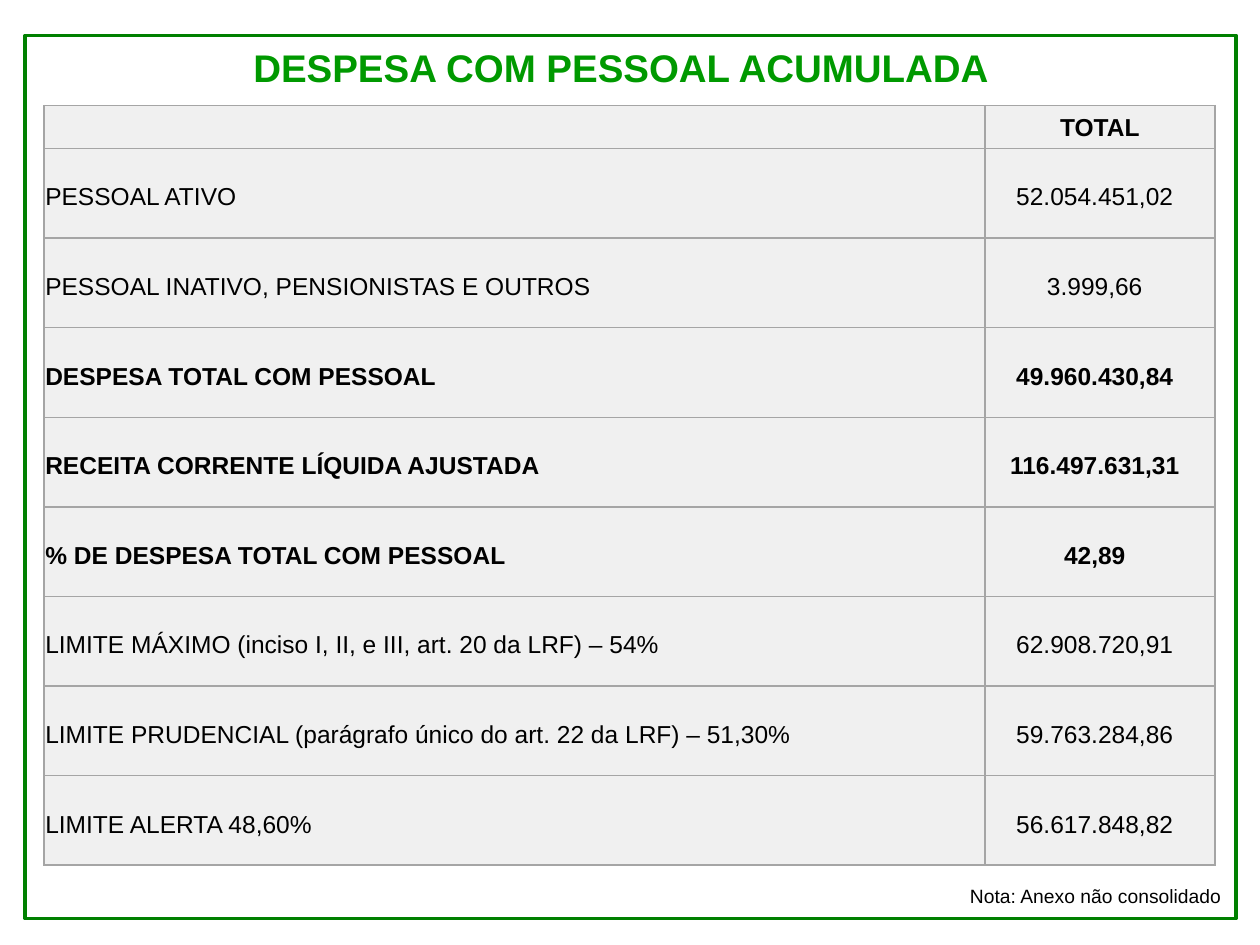
from lxml import etree
from pptx import Presentation
from pptx.dml import color
from pptx.enum import shapes, text
from pptx.oxml import ns
from pptx.util import Pt

FONT = "Arial"
GREY_LINE = "A5A5A5"
HEADER_HEIGHT = 24.6
ROW_HEIGHT = 51.2
COLUMN_WIDTHS = (537.6, 131.4)
EXPENSES = [
    ("PESSOAL ATIVO", "52.054.451,02", False),
    ("PESSOAL INATIVO, PENSIONISTAS E OUTROS", "3.999,66", False),
    ("DESPESA TOTAL COM PESSOAL", "49.960.430,84", True),
    ("RECEITA CORRENTE LÍQUIDA AJUSTADA", "116.497.631,31", True),
    ("% DE DESPESA TOTAL COM PESSOAL", "42,89", True),
    ("LIMITE MÁXIMO (inciso I, II, e III, art. 20 da LRF) – 54%", "62.908.720,91", False),
    ("LIMITE PRUDENCIAL (parágrafo único do art. 22 da LRF) – 51,30%", "59.763.284,86", False),
    ("LIMITE ALERTA 48,60%", "56.617.848,82", False),
]


def rgb(value):
    return color.RGBColor.from_string(value)


def write(frame, words, size, align, bold=False, ink="000000"):
    frame.text = words
    para = frame.paragraphs[0]
    para.alignment = align
    for span in para.runs:
        span.font.name = FONT
        span.font.size = Pt(size)
        span.font.bold = bold
        span.font.color.rgb = rgb(ink)


def add_frame(page):
    frame = page.shapes.add_shape(
        shapes.MSO_SHAPE.RECTANGLE, Pt(14.4), Pt(20.2), Pt(692), Pt(504.7))
    frame.shadow.inherit = False
    frame.fill.background()
    frame.line.color.rgb = rgb("008000")
    frame.line.width = Pt(2)


def set_title(page):
    title = page.shapes.title
    title.left, title.top, title.width, title.height = Pt(65.5), Pt(0), Pt(584), Pt(55.4)
    title.text_frame.vertical_anchor = text.MSO_ANCHOR.BOTTOM
    write(title.text_frame, "DESPESA COM PESSOAL ACUMULADA ", 22,
          text.PP_ALIGN.CENTER, True, "009900")


def add_borders(cell):
    properties = cell._tc.get_or_add_tcPr()
    for position, side in enumerate(("lnL", "lnR", "lnT", "lnB")):
        line = etree.Element(ns.qn(f"a:{side}"), w=str(Pt(1)))
        fill = etree.SubElement(line, ns.qn("a:solidFill"))
        etree.SubElement(fill, ns.qn("a:srgbClr"), val=GREY_LINE)
        properties.insert(position, line)


def fill_cell(cell, words, align, bold, header):
    cell.fill.solid()
    cell.fill.fore_color.rgb = rgb("F0F0F0")
    cell.margin_left = cell.margin_top = Pt(0.7)
    cell.margin_right = Pt(0.7 if header else 6.5)
    cell.margin_bottom = Pt(0 if header else 15.4)
    cell.vertical_anchor = text.MSO_ANCHOR.MIDDLE if header else text.MSO_ANCHOR.BOTTOM
    write(cell.text_frame, words, 14, align, bold)
    add_borders(cell)


def add_expense_table(page):
    rows = [("", "TOTAL", True)] + EXPENSES
    height = HEADER_HEIGHT + ROW_HEIGHT * len(EXPENSES)
    table = page.shapes.add_table(
        len(rows), 2, Pt(25.2), Pt(60.3), Pt(sum(COLUMN_WIDTHS)), Pt(height)).table
    for column, width in zip(table.columns, COLUMN_WIDTHS):
        column.width = Pt(width)
    for index, (label, total, bold) in enumerate(rows):
        header = index == 0
        table.rows[index].height = Pt(HEADER_HEIGHT if header else ROW_HEIGHT)
        fill_cell(table.cell(index, 0), label, text.PP_ALIGN.JUSTIFY, bold, header)
        fill_cell(table.cell(index, 1), total, text.PP_ALIGN.CENTER, bold, header)


def add_note(page):
    box = page.shapes.add_textbox(Pt(547.2), Pt(501.8), Pt(187.2), Pt(20.9))
    box.text_frame.word_wrap = True
    write(box.text_frame, "Nota: Anexo não consolidado", 11, text.PP_ALIGN.LEFT)


def main():
    deck = Presentation()
    deck.slide_width, deck.slide_height = Pt(720), Pt(540)
    page = deck.slides.add_slide(deck.slide_layouts[5])
    add_frame(page)
    set_title(page)
    add_expense_table(page)
    add_note(page)
    deck.save("out.pptx")


if __name__ == "__main__":
    main()
